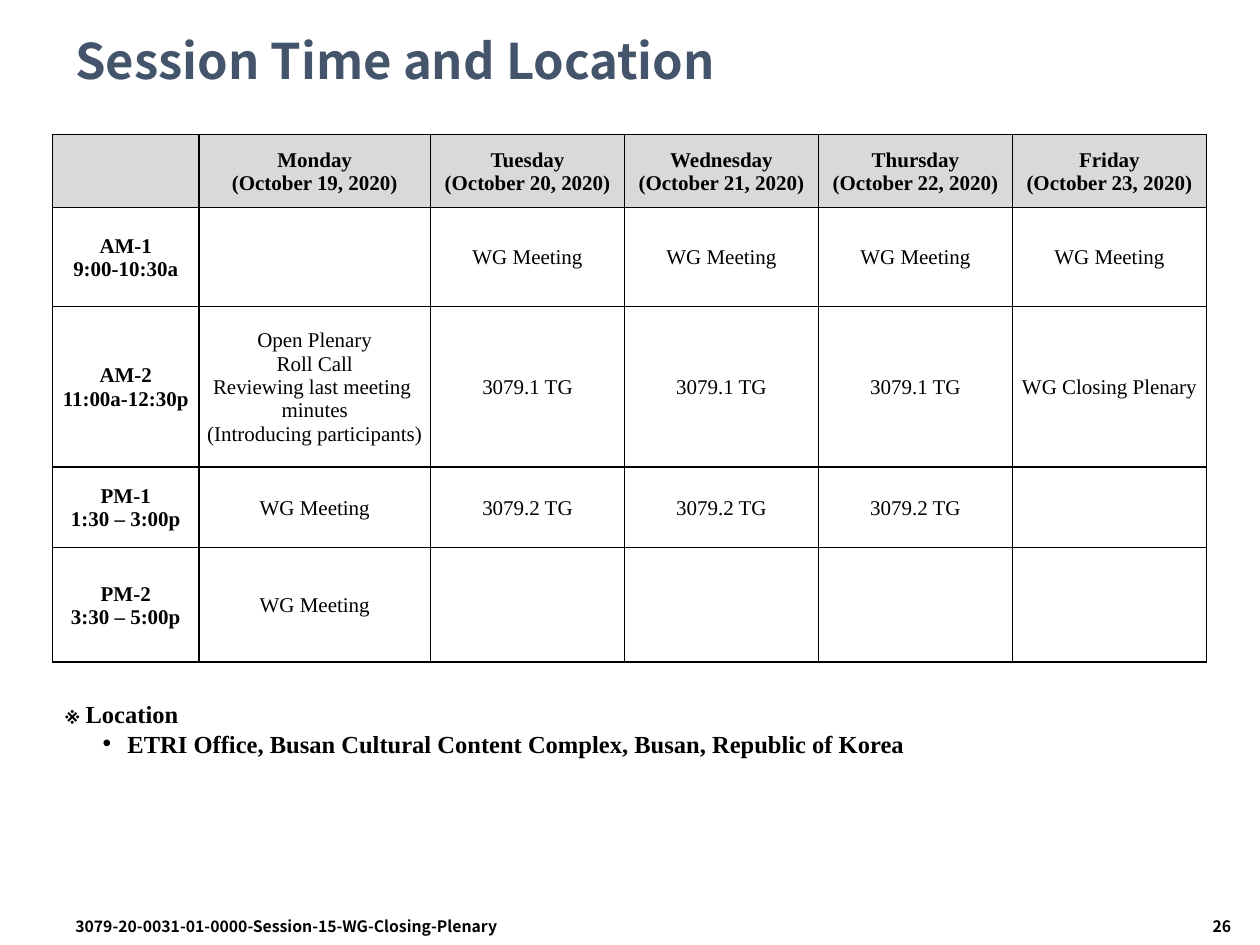
"""Build the session time and location slide."""
from lxml.etree import SubElement
from pptx import Presentation
from pptx.dml.color import RGBColor
from pptx.enum.text import MSO_ANCHOR, PP_ALIGN
from pptx.oxml.ns import qn
from pptx.util import Cm, Pt

BLACK = RGBColor(0x00, 0x00, 0x00)
SLATE = RGBColor(0x44, 0x54, 0x6A)
GREY = RGBColor(0xD9, 0xD9, 0xD9)
SANS = "Noto Sans CJK KR"
SERIF = "Times New Roman"

COLUMN_WIDTHS = [2.95, 4.67] + [3.91] * 4
ROW_HEIGHTS = [1.47, 2.0, 3.23, 1.63, 2.31]
DAYS = ["Monday", "Tuesday", "Wednesday", "Thursday", "Friday"]
HEADER = [""] + [f"{day}\n(October {date}, 2020)" for date, day in enumerate(DAYS, 19)]
OPENING = ("Open Plenary\nRoll Call\nReviewing last meeting \vminutes\n"
           "(Introducing participants)")
SCHEDULE = [
    HEADER,
    ["AM-1\n9:00-10:30a", ""] + ["WG Meeting"] * 4,
    ["AM-2\n11:00a-12:30p", OPENING] + ["3079.1 TG"] * 3 + ["WG Closing Plenary"],
    ["PM-1\n1:30 – 3:00p", "WG Meeting"] + ["3079.2 TG"] * 3 + [""],
    ["PM-2\n3:30 – 5:00p", "WG Meeting"] + [""] * 4,
]


def style_paragraph(para, font, size, color=BLACK, bold=True, align=PP_ALIGN.LEFT):
    para.alignment = align
    para.font.name = font
    para.font.size = Pt(size)
    para.font.bold = bold
    para.font.color.rgb = color


def add_text(page, place, text, font, size, color=BLACK, align=PP_ALIGN.LEFT):
    box = page.shapes.add_textbox(*(Cm(length) for length in place))
    frame = box.text_frame
    frame.word_wrap = True
    frame.text = text
    for para in frame.paragraphs:
        style_paragraph(para, font, size, color, align=align)
    return frame


def add_title(page, text):
    frame = add_text(page, (1.27, 0.43, 22.86, 1.7), text, SANS, 28, SLATE)
    frame.vertical_anchor = MSO_ANCHOR.MIDDLE
    frame.paragraphs[0].line_spacing = 0.9


def add_location(page, heading, place):
    frame = add_text(page, (1.07, 13.97, 23.29, 1.45), heading, SERIF, 14)
    para = frame.add_paragraph()
    para.text = place
    properties = para._p.get_or_add_pPr()
    properties.set("marL", str(Cm(1.25)))
    properties.set("indent", str(Cm(-0.5)))
    SubElement(properties, qn("a:buFont"), typeface="Arial")
    SubElement(properties, qn("a:buChar"), char="•")
    style_paragraph(para, SERIF, 14)


def add_borders(cell):
    properties = cell._tc.get_or_add_tcPr()
    for position, side in enumerate(("lnL", "lnR", "lnT", "lnB")):
        line = properties.makeelement(qn(f"a:{side}"), {"w": str(Pt(1))})
        fill = SubElement(line, qn("a:solidFill"))
        SubElement(fill, qn("a:srgbClr"), val=str(BLACK))
        properties.insert(position, line)


def fill_cell(cell, text, is_header, is_bold):
    cell.text = text
    cell.vertical_anchor = MSO_ANCHOR.MIDDLE
    cell.margin_left = cell.margin_right = cell.margin_top = Cm(0.03)
    cell.margin_bottom = 0
    for para in cell.text_frame.paragraphs:
        style_paragraph(para, SERIF, 12, bold=is_bold, align=PP_ALIGN.CENTER)
    if is_header:
        cell.fill.solid()
        cell.fill.fore_color.rgb = GREY
    else:
        cell.fill.background()
    add_borders(cell)


def add_schedule(page):
    frame = page.shapes.add_table(
        len(ROW_HEIGHTS), len(COLUMN_WIDTHS), Cm(1.06), Cm(2.71),
        Cm(sum(COLUMN_WIDTHS)), Cm(sum(ROW_HEIGHTS)))
    table = frame.table
    for column, width in zip(table.columns, COLUMN_WIDTHS):
        column.width = Cm(width)
    for row, height in zip(table.rows, ROW_HEIGHTS):
        row.height = Cm(height)
    for r, texts in enumerate(SCHEDULE):
        for c, text in enumerate(texts):
            fill_cell(table.cell(r, c), text, r == 0, r == 0 or c == 0)


def main():
    deck = Presentation()
    deck.slide_width, deck.slide_height = Cm(25.4), Cm(19.05)
    page = deck.slides.add_slide(deck.slide_layouts[6])
    add_title(page, "Session Time and Location")
    add_text(page, (20.96, 18.36, 4.11, 0.69), "26", SANS, 9, align=PP_ALIGN.RIGHT)
    add_text(page, (1.27, 18.36, 11.23, 0.69),
             "3079-20-0031-01-0000-Session-15-WG-Closing-Plenary", SANS, 9)
    add_location(page, "※ Location",
                 "ETRI Office, Busan Cultural Content Complex, Busan, Republic of Korea")
    add_schedule(page)
    deck.save("out.pptx")


if __name__ == "__main__":
    main()
